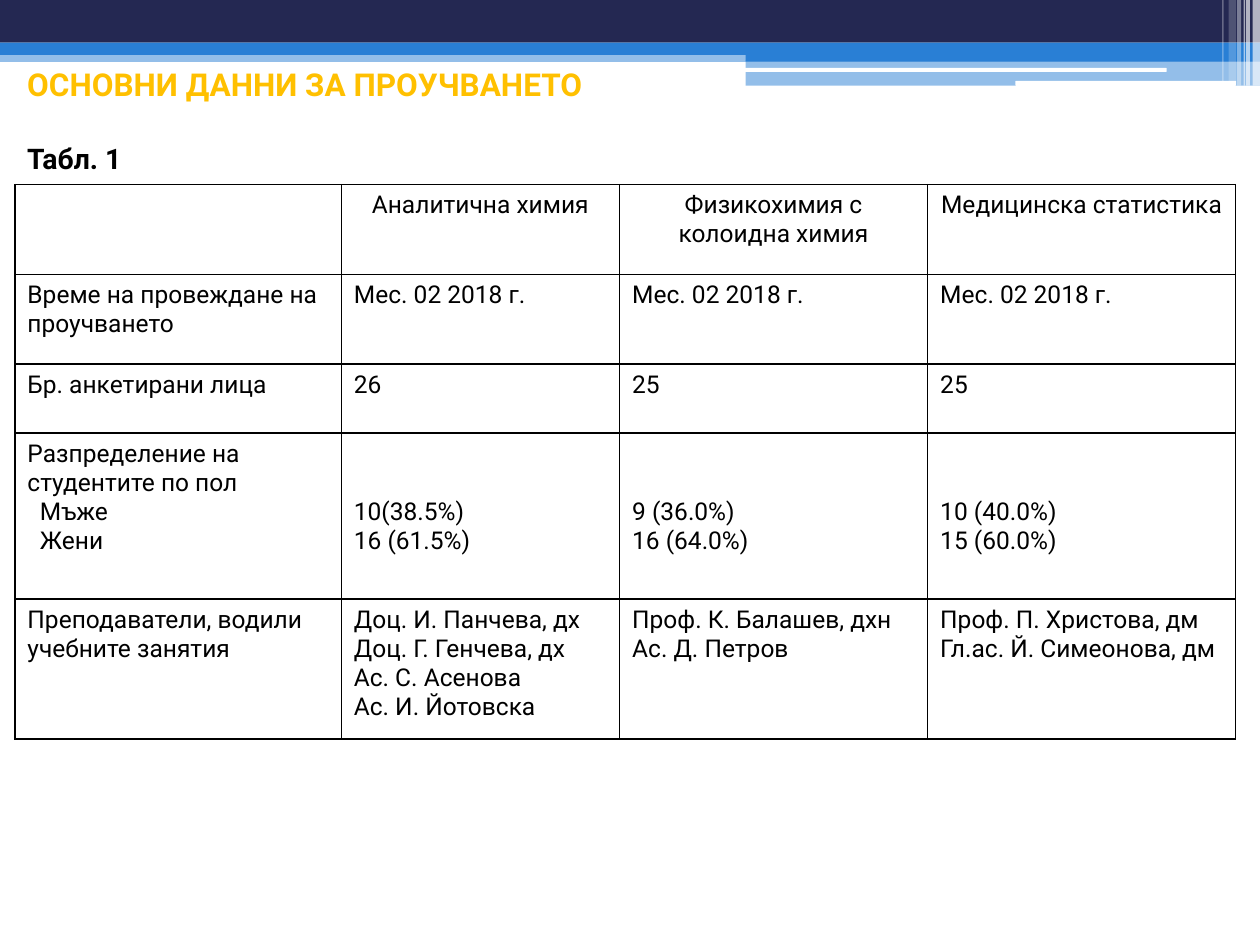
from lxml import etree
from pptx import Presentation
from pptx.dml.color import RGBColor
from pptx.enum.shapes import MSO_SHAPE
from pptx.enum.text import MSO_ANCHOR, PP_ALIGN
from pptx.oxml.ns import qn
from pptx.util import Cm, Pt

RECT = MSO_SHAPE.RECTANGLE
ROUND = MSO_SHAPE.ROUNDED_RECTANGLE
MIDDLE = MSO_ANCHOR.MIDDLE
LEFT = PP_ALIGN.LEFT
CENTER = PP_ALIGN.CENTER

HUES = {
    "navy": "242852",
    "blue": "297FD5",
    "white": "FFFFFF",
    "gold": "FFC000",
    "black": "000000",
}

BARS = [
    (RECT, 0, 1.02, 25.4, 0.23, "blue", 50),
    (RECT, 0, 0, 25.4, 0.86, "navy", 100),
    (RECT, 0, 0.86, 25.4, 0.25, "blue", 100),
    (RECT, 15.03, 0.99, 10.37, 0.25, "blue", 100),
    (RECT, 15.03, 1.22, 10.37, 0.51, "blue", 50),
    (ROUND, 15.01, 1.37, 8.51, 0.08, "white", 100),
    (ROUND, 20.47, 1.63, 4.45, 0.1, "white", 100),
]

STRIPES = [
    (25.25, 0.15, 1.73, 65),
    (25.12, 0.08, 1.73, 65),
    (25.07, 0.03, 1.73, 60),
    (24.94, 0.08, 1.73, 40),
    (24.77, 0.15, 1.63, 20),
    (24.64, 0.03, 1.63, 30),
]

DATE = "Мес. 02 2018 г."
HEAD, SEX = 0, 3
ROWS = [
    ["", "Аналитична химия", "Физикохимия с колоидна химия", "Медицинска статистика"],
    ["Време на провеждане на проучването", DATE, DATE, DATE],
    ["Бр. анкетирани лица", "26", "25", "25"],
    [
        "Разпределение на студентите по пол\nМъже\nЖени",
        "10(38.5%)\n16 (61.5%)",
        "9 (36.0%)\n16 (64.0%)",
        "10 (40.0%)\n15 (60.0%)",
    ],
    [
        "Преподаватели, водили учебните занятия",
        "Доц. И. Панчева, дх\nДоц. Г. Генчева, дх\nАс. С. Асенова\nАс. И. Йотовска",
        "Проф. К. Балашев, дхн\nАс. Д. Петров",
        "Проф. П. Христова, дм\nГл.ас. Й. Симеонова, дм",
    ],
]
WIDTHS = [6.58, 5.61, 6.21, 6.21]
HEIGHTS = [1.81, 1.81, 1.39, 3.35, 2.82]


class Deck:
    face = "Roboto"

    def __init__(self, slide):
        self.slide = slide

    def label(self, para, text, hue, size, bold=False):
        run = para.add_run()
        run.text = text
        form = {"name": self.face, "size": Pt(size), "bold": bold}
        for key, value in form.items():
            setattr(run.font, key, value)
        run.font.color.rgb = RGBColor.from_string(HUES[hue])

    def bar(self, kind, x, y, wide, high, hue, alpha):
        shape = self.slide.shapes.add_shape(kind, Cm(x), Cm(y), Cm(wide), Cm(high))
        shape.shadow.inherit = False
        shape.line.fill.background()
        shape.fill.solid()
        shape.fill.fore_color.rgb = RGBColor.from_string(HUES[hue])
        if alpha < 100:
            tint = next(shape.element.iter(qn("a:srgbClr")))
            etree.SubElement(tint, qn("a:alpha"), val=str(alpha * 1000))

    def title(self, x, y, wide, high, lines):
        box = self.slide.shapes.add_textbox(Cm(x), Cm(y), Cm(wide), Cm(high))
        frame = box.text_frame
        form = {
            "word_wrap": True,
            "vertical_anchor": MIDDLE,
            "margin_top": Cm(0.8),
            "margin_bottom": 0,
        }
        for key, value in form.items():
            setattr(frame, key, value)
        for num, (text, hue, size, gap) in enumerate(lines):
            para = frame.add_paragraph() if num else frame.paragraphs[0]
            para.space_before = Pt(gap)
            self.label(para, text, hue, size, True)

    def edge(self, cell):
        props = cell._tc.get_or_add_tcPr()
        for side in "LRTB":
            line = etree.SubElement(props, qn("a:ln" + side), w=str(Pt(1)))
            fill = etree.SubElement(line, qn("a:solidFill"))
            etree.SubElement(fill, qn("a:srgbClr"), val=HUES["black"])

    def fill(self, cell, text, align, dent):
        self.edge(cell)
        cell.fill.background()
        frame = cell.text_frame
        for num, line in enumerate(text.split("\n")):
            para = frame.add_paragraph() if num else frame.paragraphs[0]
            para.alignment = align
            if num and dent:
                para._p.get_or_add_pPr().set("marL", str(Cm(dent)))
            if line:
                self.label(para, line, "black", 14)

    def table(self, x, y):
        size = Cm(sum(WIDTHS)), Cm(sum(HEIGHTS))
        table = self.slide.shapes.add_table(
            len(ROWS), len(WIDTHS), Cm(x), Cm(y), *size
        ).table
        table.first_row = table.horz_banding = False
        for col, wide in zip(table.columns, WIDTHS):
            col.width = Cm(wide)
        for row, high in zip(table.rows, HEIGHTS):
            row.height = Cm(high)
        for r, row in enumerate(ROWS):
            for c, text in enumerate(row):
                cell = table.cell(r, c)
                dent = 0.25 if r == SEX and c == 0 else 0
                self.fill(cell, text, CENTER if r == HEAD else LEFT, dent)
                if r == SEX and c:
                    cell.margin_top = Cm(1.3)


def main():
    show = Presentation()
    show.slide_width, show.slide_height = Cm(25.4), Cm(19.05)
    deck = Deck(show.slides.add_slide(show.slide_layouts[6]))
    for bar in BARS:
        deck.bar(*bar)
    for x, wide, high, alpha in STRIPES:
        deck.bar(RECT, x, 0, wide, high, "white", alpha)
    deck.title(0.3, 1.52, 24.2, 1, [
        ("ОСНОВНИ ДАННИ ЗА ПРОУЧВАНЕТО", "gold", 18, 0),
        ("Табл. 1", "black", 16.2, 22),
    ])
    deck.table(0.3, 3.72)
    show.save("out.pptx")


if __name__ == "__main__":
    main()
